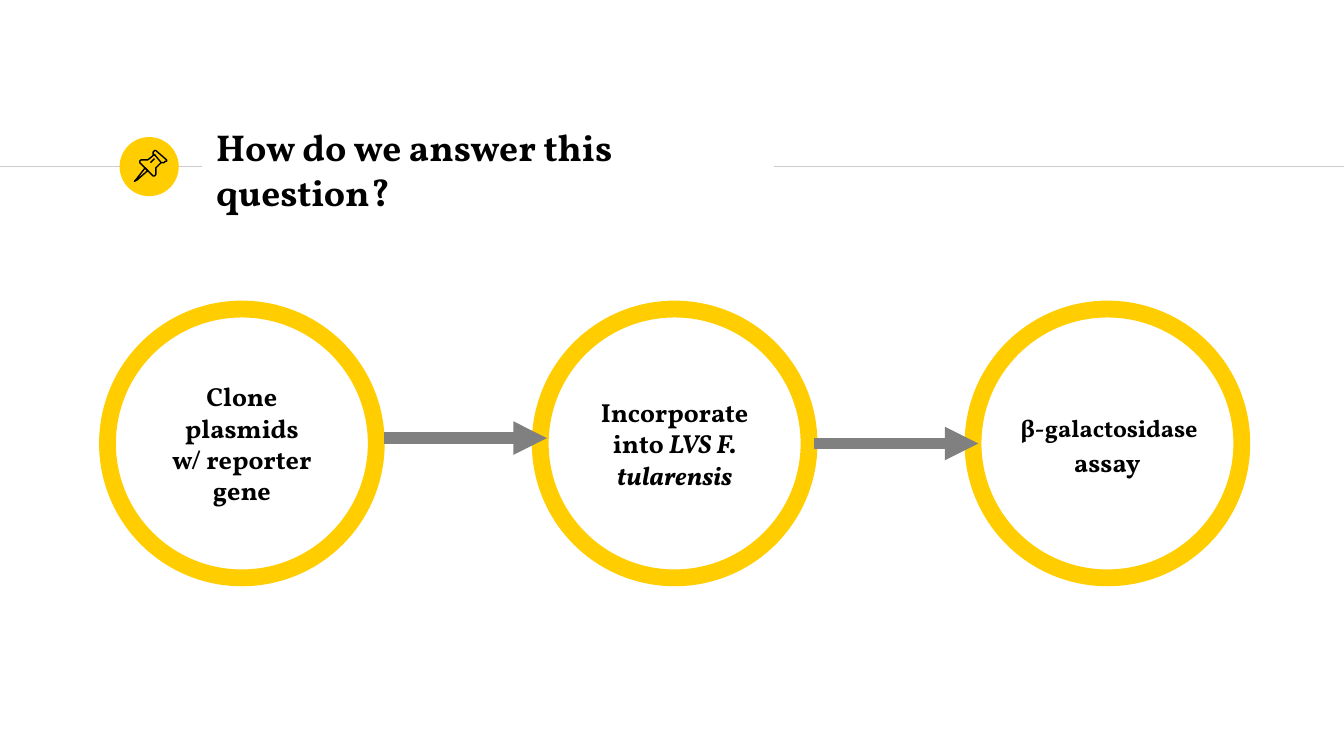
from lxml import etree
from pptx import Presentation
from pptx.dml.color import RGBColor
from pptx.enum import shapes, text
from pptx.oxml.ns import qn
from pptx.util import Inches, Pt

YELLOW = RGBColor(0xFF, 0xCD, 0x00)
GRAY = RGBColor(0x80, 0x80, 0x80)
LIGHT_GRAY = RGBColor(0xCC, 0xCC, 0xCC)
BLACK = RGBColor(0x00, 0x00, 0x00)
FONT = "Vollkorn"

TITLE = "How do we answer this question?"
STEPS = [
    {"paragraphs": [[("Clone plasmids", 14, False)], [("w/ reporter gene", 14, False)]],
     "inset": 0.1, "spacing": None},
    {"paragraphs": [[("Incorporate into", 14, False), (" LVS F. tularensis", 14, True)]],
     "inset": 0.1, "spacing": None},
    {"paragraphs": [[(" ", 9, False), ("β-galactosidase", 13, False),
                     (" ", 9, False), ("assay", 14, False)]],
     "inset": 0, "spacing": 1.15},
]
RULES = [(0, 1.5), (5.76, 10)]
RULE_TOP = 1.24
ARROWS = [(2.86, 4.07, 3.26), (6.06, 7.28, 3.3)]
CIRCLE_LEFT, CIRCLE_TOP, CIRCLE_SIZE, CIRCLE_STEP = 0.8, 2.3, 2, 3.22

PIN_NEEDLE = [(1.08, 1.25), (1.01, 1.34), (1, 1.35), (1.02, 1.34), (1.1, 1.27)]
PIN_HEAD = [(1.15, 1.15), (1.2, 1.21), (1.22, 1.21), (1.23, 1.2), (1.24, 1.2),
            (1.24, 1.19), (1.16, 1.12), (1.15, 1.12), (1.14, 1.13), (1.14, 1.15)]
PIN_BODY = [(1.15, 1.15), (1.1, 1.19), (1.07, 1.19), (1.05, 1.19), (1.04, 1.2),
            (1.04, 1.21), (1.14, 1.31), (1.15, 1.31), (1.16, 1.3), (1.16, 1.25),
            (1.2, 1.21)]
PIN_SHINE = [(1.12, 1.21), (1.15, 1.18)]
PIN_PARTS = [(PIN_NEEDLE, True), (PIN_HEAD, True), (PIN_BODY, False), (PIN_SHINE, False)]


def add_line(slide, left, right, top, color, width):
    line = slide.shapes.add_connector(
        shapes.MSO_CONNECTOR.STRAIGHT, Inches(left), Inches(top), Inches(right), Inches(top))
    line.line.color.rgb = color
    line.line.width = Pt(width)
    etree.SubElement(line._element.spPr, qn("a:effectLst"))
    return line


def add_circle(slide, left, top, size):
    circle = slide.shapes.add_shape(
        shapes.MSO_SHAPE.OVAL, Inches(left), Inches(top), Inches(size), Inches(size))
    circle.shadow.inherit = False
    return circle


def set_frame(frame, inset):
    frame.word_wrap = True
    frame.vertical_anchor = text.MSO_ANCHOR.MIDDLE
    frame.margin_left = frame.margin_right = Inches(inset)
    frame.margin_top = frame.margin_bottom = Inches(inset)


def set_font(font):
    font.name = FONT
    font.bold = True
    font.color.rgb = BLACK


def add_title(slide):
    box = slide.shapes.add_textbox(Inches(1.51), Inches(1.02), Inches(4.24), Inches(0.48))
    set_frame(box.text_frame, 0.1)
    paragraph = box.text_frame.paragraphs[0]
    paragraph.text = TITLE
    paragraph.font.size = Pt(20)
    set_font(paragraph.font)


def add_pin(slide):
    badge = add_circle(slide, 0.89, 1.02, 0.44)
    badge.fill.solid()
    badge.fill.fore_color.rgb = YELLOW
    badge.line.fill.background()
    for points, closed in PIN_PARTS:
        corners = [(Inches(x), Inches(y)) for x, y in points]
        builder = slide.shapes.build_freeform(*corners[0])
        builder.add_line_segments(corners[1:], close=closed)
        part = builder.convert_to_shape()
        part.shadow.inherit = False
        part.fill.background()
        part.line.color.rgb = BLACK
        part.line.width = Pt(0.75)


def add_step(slide, index, step):
    circle = add_circle(slide, CIRCLE_LEFT + index * CIRCLE_STEP, CIRCLE_TOP, CIRCLE_SIZE)
    circle.fill.background()
    circle.line.color.rgb = YELLOW
    circle.line.width = Pt(9)
    frame = circle.text_frame
    set_frame(frame, step["inset"])
    for number, runs in enumerate(step["paragraphs"]):
        paragraph = frame.add_paragraph() if number else frame.paragraphs[0]
        paragraph.alignment = text.PP_ALIGN.CENTER
        paragraph.line_spacing = step["spacing"]
        for words, size, italic in runs:
            run = paragraph.add_run()
            run.text = words
            set_font(run.font)
            run.font.size = Pt(size)
            run.font.italic = italic


def main():
    presentation = Presentation()
    presentation.slide_width = Inches(10)
    presentation.slide_height = Inches(10) * 9 // 16
    slide = presentation.slides.add_slide(presentation.slide_layouts[6])
    for left, right in RULES:
        add_line(slide, left, right, RULE_TOP, LIGHT_GRAY, 0.75)
    add_title(slide)
    add_pin(slide)
    for index, step in enumerate(STEPS):
        add_step(slide, index, step)
    for left, right, top in ARROWS:
        arrow = add_line(slide, left, right, top, GRAY, 6)
        etree.SubElement(arrow.line._get_or_add_ln(), qn("a:tailEnd"), type="triangle")
    presentation.save("out.pptx")


if __name__ == "__main__":
    main()
